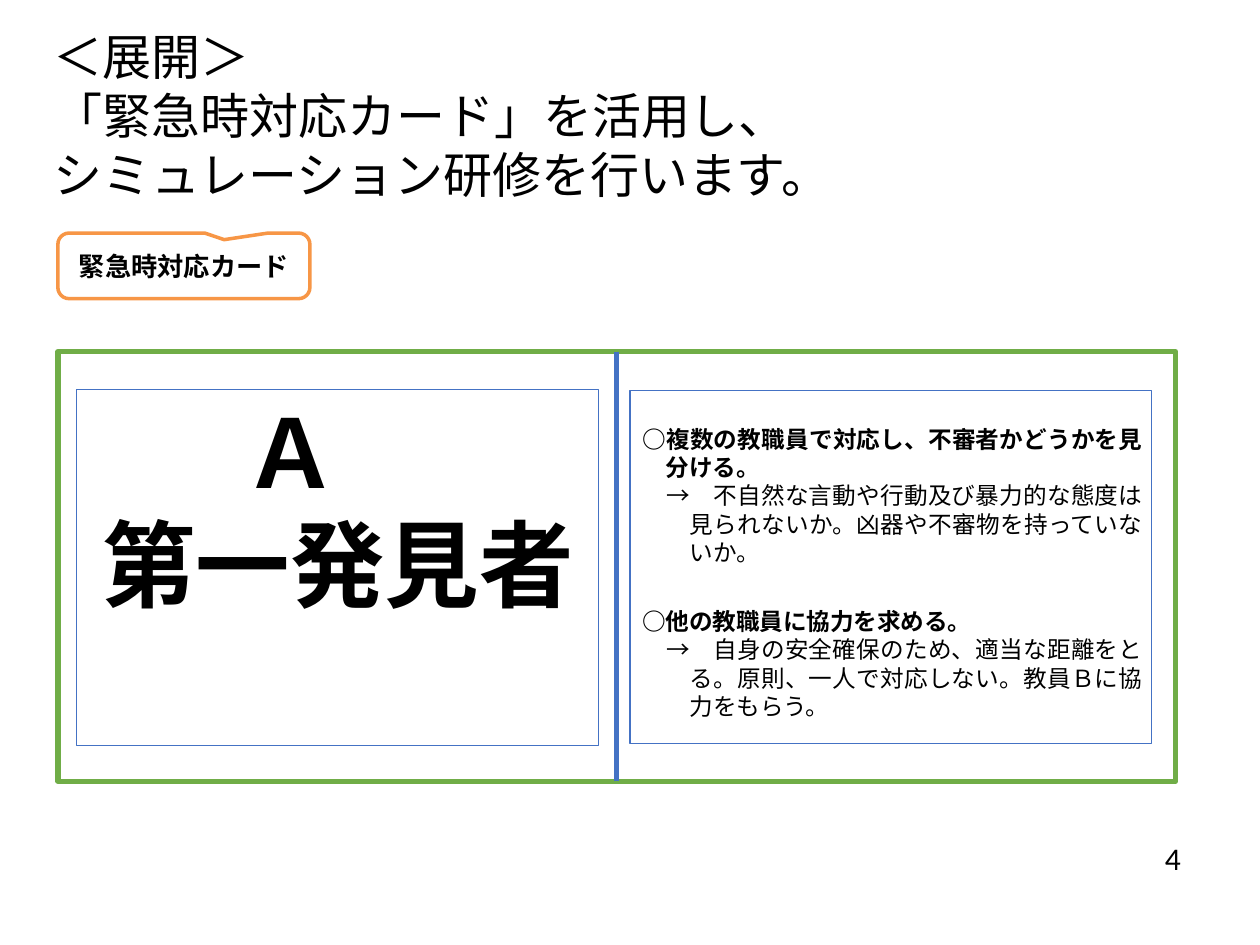
from pptx import Presentation
from pptx.dml.color import RGBColor
from pptx.enum.shapes import MSO_CONNECTOR, MSO_SHAPE
from pptx.enum.text import MSO_ANCHOR, PP_ALIGN
from pptx.oxml.ns import qn
from pptx.util import Inches, Pt

RECT = MSO_SHAPE.RECTANGLE
CALLOUT = MSO_SHAPE.ROUNDED_RECTANGULAR_CALLOUT
STRAIGHT = MSO_CONNECTOR.STRAIGHT
TOP, MIDDLE = MSO_ANCHOR.TOP, MSO_ANCHOR.MIDDLE
LEFT, CENTER, RIGHT, JUSTIFY = (
    PP_ALIGN.LEFT, PP_ALIGN.CENTER, PP_ALIGN.RIGHT, PP_ALIGN.JUSTIFY)

COLORS = {"text": "000000", "paper": "FFFFFF", "frame": "70AD47",
          "card": "4472C4", "label": "F79646"}
JAPANESE = "Noto Sans CJK JP"
INSETS = (0.1, 0.05, 0.1, 0.05)
EM = 13.5 / 72  # width of one full-width character on the instruction card

INSTRUCTIONS = [
    ("複数の教職員で対応し、不審者かどうかを見分ける。",
     "不自然な言動や行動及び暴力的な態度は見られないか。凶器や不審物を持っていないか。"),
    ("他の教職員に協力を求める。",
     "自身の安全確保のため、適当な距離をとる。原則、一人で対応しない。教員Ｂに協力をもらう。"),
]


def color(name):
    return RGBColor.from_string(COLORS[name])


def set_line(item, name, width):
    item.line.color.rgb = color(name)
    item.line.width = Pt(width)


def add_panel(page, kind, place, line, width, fill=None):
    panel = page.shapes.add_shape(kind, *map(Inches, place))
    panel.shadow.inherit = False
    set_line(panel, line, width)
    if fill:
        panel.fill.solid()
        panel.fill.fore_color.rgb = color(fill)
    else:
        panel.fill.background()
    return panel


def add_text_box(page, place):
    return page.shapes.add_textbox(*map(Inches, place))


def add_divider(page, frame):
    divider = page.shapes.add_connector(STRAIGHT, 0, 0, 0, 0)
    divider.begin_connect(frame, 0)
    divider.end_connect(frame, 2)
    set_line(divider, "card", 3)
    properties = divider._element.spPr
    properties.append(properties.makeelement(qn("a:effectLst"), {}))


def prepare_frame(box, anchor=TOP, insets=INSETS):
    frame = box.text_frame
    sides = ("margin_left", "margin_top", "margin_right", "margin_bottom")
    for side, inset in zip(sides, insets):
        setattr(frame, side, Inches(inset))
    frame.word_wrap = True
    frame.vertical_anchor = anchor
    return frame


def add_para(frame, text, size, font=JAPANESE, bold=False, align=LEFT,
             pitch=None, before=0, margin=0, hang=0):
    first = frame.paragraphs[0]
    para = frame.add_paragraph() if first.runs else first
    span = para.add_run()
    span.text = text
    span.font.color.rgb = color("text")
    formats = {"name": font, "size": Pt(size), "bold": bold}
    for key, value in formats.items():
        setattr(span.font, key, value)
    if font == JAPANESE:
        properties = span.font._element
        east_asian = properties.makeelement(qn("a:ea"), {"typeface": font})
        properties.find(qn("a:latin")).addnext(east_asian)
    para.alignment = align
    para.space_before = Pt(before)
    if pitch:
        para.line_spacing = Pt(pitch)
    if hang:
        indents = para._p.get_or_add_pPr()
        indents.set("marL", str(Inches(margin)))
        indents.set("indent", str(-Inches(hang)))


def add_instructions(card):
    frame = prepare_frame(card, insets=(0.1, 0.27, 0.07, 0.05))
    style = {"size": 13.5, "align": JUSTIFY, "pitch": 16.2, "hang": EM}
    for index, (heading, detail) in enumerate(INSTRUCTIONS):
        add_para(frame, "○" + heading, bold=True, margin=EM,
                 before=23 if index else 0, **style)
        add_para(frame, "→　" + detail, margin=2 * EM, **style)


def main():
    deck = Presentation()
    deck.slide_width, deck.slide_height = Inches(10), Inches(7.5)
    page = deck.slides.add_slide(deck.slide_layouts[6])

    # Green frame around both cards
    frame = add_panel(page, RECT, (0.46, 2.79, 8.87, 3.41), "frame", 3, "paper")

    # Callout label
    label = add_panel(page, CALLOUT, (0.46, 1.85, 2, 0.52), "label", 2, "paper")
    for index, value in enumerate((0.16, -0.4, 0.17)):
        label.adjustments[index] = value
    add_para(prepare_frame(label, MIDDLE, (0.07, 0.04, 0.07, 0.04)),
             "緊急時対応カード", 15, "Cambria", bold=True, align=CENTER)

    # Instruction card, fold line and role card
    add_instructions(add_panel(page, RECT, (5, 3.1, 4.14, 2.8), "card", 0.75))
    add_divider(page, frame)
    role = prepare_frame(
        add_panel(page, RECT, (0.61, 3.09, 4.14, 2.83), "card", 0.75))
    for text in ("Ａ　", "第一発見者"):
        add_para(role, text, 54, bold=True, align=CENTER, pitch=64)

    # Title
    title = prepare_frame(add_text_box(page, (0.33, 0.16, 7.03, 1.51)))
    for text in ("＜展開＞", "「緊急時対応カード」を活用し、",
                 "シミュレーション研修を行います。"):
        add_para(title, text, 28, pitch=33.7)

    # Page number
    number = add_text_box(page, (7.39, 6.56, 2.08, 0.5))
    add_para(prepare_frame(number, MIDDLE), "4", 18, "Calibri", align=RIGHT)

    deck.save("out.pptx")


if __name__ == "__main__":
    main()
